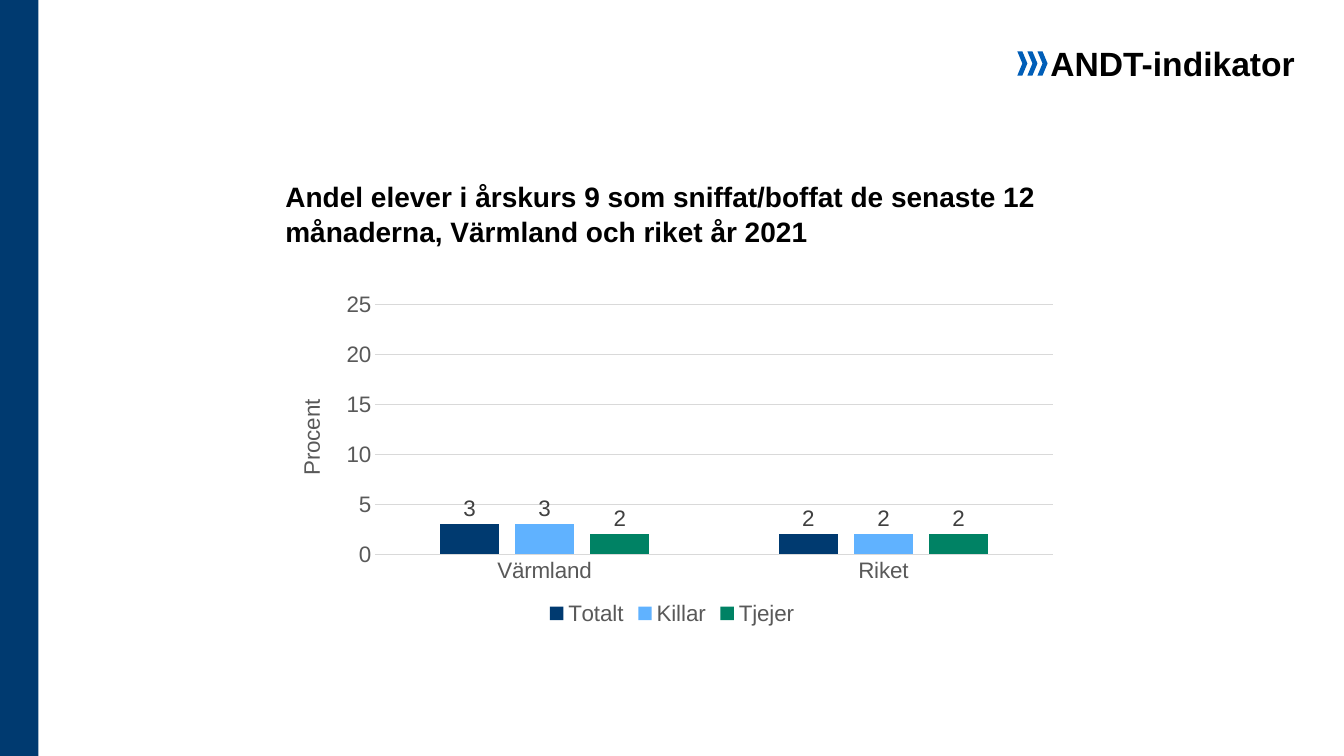
from dataclasses import dataclass

import pptx
import pptx.chart.data
import pptx.dml.color
import pptx.enum.chart
import pptx.enum.shapes
import pptx.enum.text
import pptx.util
from pptx.util import Inches


@dataclass(frozen=True)
class Theme:
    font: str = "Arial"
    navy: str = "003A70"
    blue: str = "005EB8"
    sky: str = "60B2FF"
    green: str = "008264"
    black: str = "000000"
    label: str = "404040"
    axis: str = "595959"
    grid: str = "D9D9D9"
    heading_size: int = 20
    tag_size: int = 24
    chart_size: int = 16


THEME = Theme()
ALIGN = pptx.enum.text.PP_ALIGN
ANCHOR = pptx.enum.text.MSO_ANCHOR


def rgb(color):
    return pptx.dml.color.RGBColor.from_string(color)


def format_font(font, size, color, bold=False):
    font.name = THEME.font
    font.size = pptx.util.Pt(size)
    font.bold = bold
    font.color.rgb = rgb(color)


def write_text(frame, text, *, size, color=THEME.black, bold=True,
               align=ALIGN.LEFT, anchor=ANCHOR.TOP, line_spacing=1.05):
    frame.word_wrap = True
    frame.auto_size = pptx.enum.text.MSO_AUTO_SIZE.NONE
    frame.vertical_anchor = anchor
    paragraph = frame.paragraphs[0]
    paragraph.alignment = align
    paragraph.line_spacing = line_spacing
    run = paragraph.add_run()
    run.text = text
    format_font(run.font, size, color, bold)


def add_filled(shapes, kind, left, top, width, height, color):
    filled = shapes.add_shape(kind, Inches(left), Inches(top), Inches(width), Inches(height))
    filled.shadow.inherit = False
    filled.fill.solid()
    filled.fill.fore_color.rgb = rgb(color)
    filled.line.fill.background()


def add_heading(slide, text):
    heading = slide.shapes.title
    heading.left, heading.top = Inches(2.73), Inches(1.06)
    heading.width, heading.height = Inches(7.87), Inches(1.45)
    write_text(heading.text_frame, text, size=THEME.heading_size, anchor=ANCHOR.BOTTOM)


def add_indicator_tag(slide, text):
    tag = slide.shapes.add_textbox(Inches(10.31), Inches(0.36), Inches(2.64), Inches(0.38))
    write_text(tag.text_frame, text, size=THEME.tag_size, align=ALIGN.CENTER)
    chevrons = slide.shapes.add_group_shape()
    for step in range(3):
        add_filled(chevrons.shapes, pptx.enum.shapes.MSO_SHAPE.CHEVRON,
                   10.29 - 0.1 * step, 0.51, 0.1, 0.24, THEME.blue)


def format_line(line, color):
    line.color.rgb = rgb(color)
    line.width = pptx.util.Pt(0.75)


def format_axes(chart, value_title):
    regions, percent = chart.category_axis, chart.value_axis
    for axis in (regions, percent):
        axis.major_tick_mark = pptx.enum.chart.XL_TICK_MARK.NONE
        axis.minor_tick_mark = pptx.enum.chart.XL_TICK_MARK.NONE
        format_font(axis.tick_labels.font, THEME.chart_size, THEME.axis)
    format_line(regions.format.line, THEME.grid)
    percent.format.line.fill.background()
    percent.minimum_scale, percent.maximum_scale, percent.major_unit = 0, 25, 5
    percent.tick_labels.number_format = "0"
    percent.tick_labels.number_format_is_linked = False
    format_line(percent.major_gridlines.format.line, THEME.grid)
    write_text_frame = percent.axis_title.text_frame
    write_text_frame.text = value_title
    format_font(write_text_frame.paragraphs[0].runs[0].font, THEME.chart_size, THEME.axis)


def format_series(series, color):
    series.format.fill.solid()
    series.format.fill.fore_color.rgb = rgb(color)
    series.invert_if_negative = False
    labels = series.data_labels
    labels.show_value = True
    labels.number_format = "0"
    labels.number_format_is_linked = False
    labels.position = pptx.enum.chart.XL_LABEL_POSITION.OUTSIDE_END
    format_font(labels.font, THEME.chart_size, THEME.label)


def add_column_chart(slide, regions, groups, value_title):
    data = pptx.chart.data.CategoryChartData(number_format="0")
    data.categories = regions
    for name, shares, _ in groups:
        data.add_series(name, shares)
    chart = slide.shapes.add_chart(
        pptx.enum.chart.XL_CHART_TYPE.COLUMN_CLUSTERED,
        Inches(2.73), Inches(2.83), Inches(7.87), Inches(3.42), data).chart
    format_font(chart.font, THEME.chart_size, THEME.black)
    chart.has_title = False
    chart.has_legend = True
    chart.legend.position = pptx.enum.chart.XL_LEGEND_POSITION.BOTTOM
    chart.legend.include_in_layout = False
    format_font(chart.legend.font, THEME.chart_size, THEME.axis)
    format_axes(chart, value_title)
    columns = chart.plots[0]
    columns.gap_width, columns.overlap = 219, -27
    columns.vary_by_categories = False
    for series, (_, _, color) in zip(columns.series, groups):
        format_series(series, color)


def main():
    deck = pptx.Presentation()
    deck.slide_width, deck.slide_height = Inches(13.33), Inches(7.5)
    slide = deck.slides.add_slide(deck.slide_layouts.get_by_name("Title Only"))
    add_filled(slide.shapes, pptx.enum.shapes.MSO_SHAPE.RECTANGLE, 0, 0, 0.38, 7.5, THEME.navy)
    add_heading(slide, "Andel elever i årskurs 9 som sniffat/boffat de senaste 12 "
                       "månaderna, Värmland och riket år 2021")
    add_indicator_tag(slide, "ANDT-indikator")
    groups = [
        ("Totalt", (3, 2), THEME.navy),
        ("Killar", (3, 2), THEME.sky),
        ("Tjejer", (2, 2), THEME.green),
    ]
    add_column_chart(slide, ["Värmland", "Riket"], groups, "Procent")
    deck.save("out.pptx")


if __name__ == "__main__":
    main()
